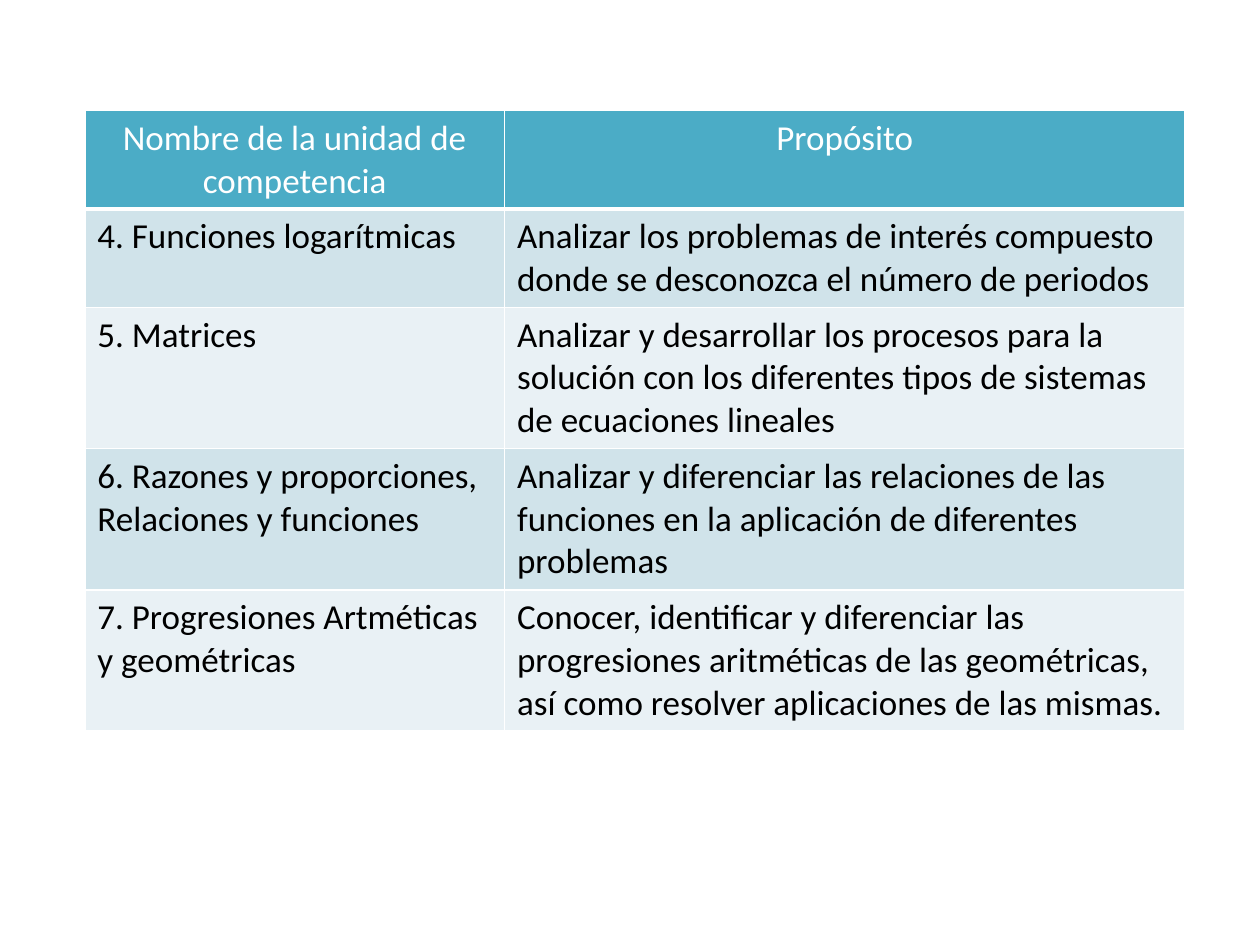
from lxml.etree import SubElement
from pptx import Presentation
from pptx.dml.color import RGBColor
from pptx.enum.text import PP_ALIGN
from pptx.oxml.ns import qn
from pptx.util import Cm, Pt

# Content: competence unit, purpose, lines of text in the row
ROWS = [
    ("Nombre de la unidad de competencia", "Propósito", 2),
    ("4. Funciones logarítmicas",
     "Analizar los problemas de interés compuesto donde se desconozca "
     "el número de periodos", 2),
    ("5. Matrices",
     "Analizar y desarrollar los procesos para la solución con los "
     "diferentes tipos de sistemas de ecuaciones lineales", 3),
    ("6. Razones y proporciones, Relaciones y funciones",
     "Analizar y diferenciar las relaciones de las funciones en la "
     "aplicación de diferentes problemas", 3),
    ("7. Progresiones Artméticas y geométricas",
     "Conocer, identificar y diferenciar las progresiones aritméticas de las "
     "geométricas, así como resolver aplicaciones de las mismas.", 3),
]

# Layout and style
LEFT, TOP = 1.71, 2.23
COLUMN_WIDTHS = (8.46, 13.72)
LINE_HEIGHT, CELL_PADDING = 0.86, 0.26
HEADER_FILL, BAND_FILLS = "4BACC6", ("D0E3EA", "E9F1F5")
WHITE, BLACK = "FFFFFF", "000000"


def color(hex_string):
    return RGBColor.from_string(hex_string)


def add_borders(cell, bottom_width):
    properties = cell._tc.get_or_add_tcPr()
    widths = {"lnL": 1, "lnR": 1, "lnT": 1, "lnB": bottom_width}
    for side, width in widths.items():
        line = SubElement(properties, qn(f"a:{side}"), w=str(Pt(width)))
        fill = SubElement(line, qn("a:solidFill"))
        SubElement(fill, qn("a:srgbClr"), val=WHITE)


def format_cell(cell, text, row_index):
    is_header = row_index == 0
    add_borders(cell, 3 if is_header else 1)
    cell.fill.solid()
    cell.fill.fore_color.rgb = color(
        HEADER_FILL if is_header else BAND_FILLS[(row_index - 1) % 2])
    paragraph = cell.text_frame.paragraphs[0]
    paragraph.alignment = PP_ALIGN.CENTER if is_header else PP_ALIGN.LEFT
    run = paragraph.add_run()
    run.text = text
    run.font.name = "Calibri"
    run.font.size = Pt(20)
    run.font.bold = False
    run.font.color.rgb = color(WHITE if is_header else BLACK)


def main():
    presentation = Presentation()
    presentation.slide_width, presentation.slide_height = Cm(25.4), Cm(19.05)
    slide = presentation.slides.add_slide(presentation.slide_layouts[6])

    # Table of competence units
    heights = [lines * LINE_HEIGHT + CELL_PADDING for *_, lines in ROWS]
    table = slide.shapes.add_table(
        len(ROWS), len(COLUMN_WIDTHS), Cm(LEFT), Cm(TOP),
        Cm(sum(COLUMN_WIDTHS)), Cm(sum(heights))).table
    for column, width in zip(table.columns, COLUMN_WIDTHS):
        column.width = Cm(width)
    for row_index, (*texts, _) in enumerate(ROWS):
        table.rows[row_index].height = Cm(heights[row_index])
        for column_index, text in enumerate(texts):
            format_cell(table.cell(row_index, column_index), text, row_index)

    presentation.save("out.pptx")


if __name__ == "__main__":
    main()
